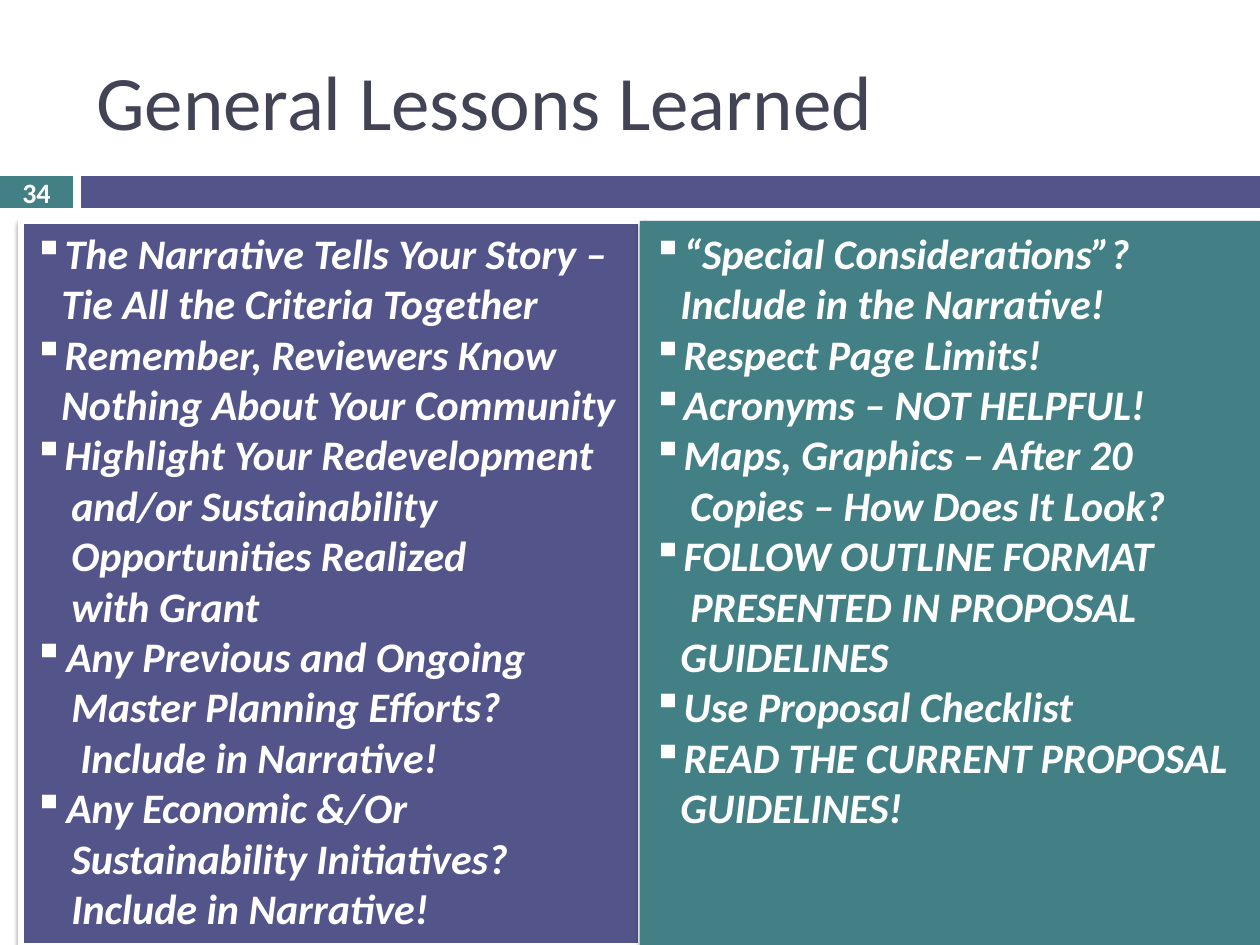
from lxml.etree import SubElement
from pptx import Presentation
from pptx.dml.color import RGBColor
from pptx.enum.shapes import MSO_SHAPE as SHAPE
from pptx.enum.text import MSO_ANCHOR as ANCHOR, PP_ALIGN as ALIGN
from pptx.oxml.ns import qn
from pptx.util import Pt

SCALE = 914400 / 126
FONT = "Calibri"
COLORS = {
    "title": "424456",
    "purple": "53548A",
    "teal": "438086",
    "white": "FFFFFF",
    "shadow": "000000",
}
BULLET, TIGHT, SPACED, WIDE = "▪", 15, 24, 33
NARROW_HANG, HANG, DEEP_HANG = 28, 38, 47

STORY_LINES = [
    (BULLET, TIGHT, "The Narrative Tells Your Story –"),
    (None, NARROW_HANG, "Tie All the Criteria Together"),
    (BULLET, SPACED, "Remember, Reviewers Know"),
    (None, NARROW_HANG, "Nothing About Your Community"),
    (BULLET, SPACED, "Highlight Your Redevelopment"),
    (None, HANG, "and/or Sustainability"),
    (None, HANG, "Opportunities Realized"),
    (None, HANG, "with Grant"),
    (BULLET, WIDE, "Any Previous and Ongoing"),
    (None, HANG, "Master Planning Efforts?"),
    (None, DEEP_HANG, "Include in Narrative!"),
    (BULLET, WIDE, "Any Economic &/Or"),
    (None, HANG, "Sustainability Initiatives?"),
    (None, HANG, "Include in Narrative!"),
]
FORMAT_LINES = [
    (BULLET, TIGHT, "“Special Considerations”?"),
    (None, NARROW_HANG, "Include in the Narrative!"),
    (BULLET, TIGHT, "Respect Page Limits!"),
    (BULLET, SPACED, "Acronyms – NOT HELPFUL!"),
    (BULLET, SPACED, "Maps, Graphics – After 20"),
    (None, HANG, "Copies – How Does It Look?"),
    (BULLET, SPACED, "FOLLOW OUTLINE FORMAT"),
    (None, HANG, "PRESENTED IN PROPOSAL"),
    (None, NARROW_HANG, "GUIDELINES"),
    (BULLET, TIGHT, "Use Proposal Checklist"),
    (BULLET, SPACED, "READ THE CURRENT PROPOSAL"),
    (None, NARROW_HANG, "GUIDELINES!"),
]


def px(n):
    return round(n * SCALE)


def rgb(name):
    return RGBColor.from_string(COLORS[name])


def add_rect(s, x, y, w, h, color):
    sp = s.shapes.add_shape(SHAPE.RECTANGLE, px(x), px(y), px(w), px(h))
    sp.shadow.inherit = False
    sp.fill.solid()
    sp.fill.fore_color.rgb = rgb(color)
    sp.line.fill.background()
    return sp


def add_run(p, text, size, color, bold=False, italic=False):
    r = p.add_run()
    r.text = text
    r.font.name = FONT
    r.font.size = Pt(size)
    r.font.bold = bold
    r.font.italic = italic
    r.font.color.rgb = rgb(color)


def add_shadow(sp, alpha, distance):
    effects = sp._element.spPr.find(qn("a:effectLst"))
    shadow = SubElement(
        effects, qn("a:outerShdw"), blurRad=str(Pt(3)), dist=str(Pt(distance)),
        dir="5400000", rotWithShape="0")
    color = SubElement(shadow, qn("a:srgbClr"), val=COLORS["shadow"])
    SubElement(color, qn("a:alpha"), val=str(alpha * 1000))


def add_title(s, x, y, w, h, text):
    sp = s.shapes.add_textbox(px(x), px(y), px(w), px(h))
    tf = sp.text_frame
    tf.word_wrap = True
    tf.vertical_anchor = ANCHOR.MIDDLE
    add_run(tf.paragraphs[0], text, 44, "title")


def add_band(s, x, y, w, h, number):
    badge_w, gap = 73, 8
    badge = add_rect(s, x, y, badge_w, h, "teal")
    add_rect(s, x + badge_w + gap, y, w - badge_w - gap, h, "purple")
    tf = badge.text_frame
    tf.margin_top = tf.margin_bottom = 0
    tf.vertical_anchor = ANCHOR.MIDDLE
    p = tf.paragraphs[0]
    p.alignment = ALIGN.CENTER
    add_run(p, number, 16, "white", bold=True)


def add_panel(s, x, y, w, h, color, lines, alpha, distance, outline=None):
    sp = add_rect(s, x, y, w, h, color)
    add_shadow(sp, alpha, distance)
    if outline:
        sp.line.color.rgb = rgb("white")
        sp.line.width = Pt(outline)
    tf = sp.text_frame
    tf.word_wrap = True
    tf.vertical_anchor = ANCHOR.TOP
    for i, (bullet, indent, text) in enumerate(lines):
        p = tf.add_paragraph() if i else tf.paragraphs[0]
        p.alignment = ALIGN.LEFT
        pPr = p._p.get_or_add_pPr()
        pPr.set("marL", str(px(indent)))
        pPr.set("indent", str(-px(indent) if bullet else 0))
        if bullet:
            SubElement(pPr, qn("a:buChar"), char=bullet)
        else:
            SubElement(pPr, qn("a:buNone"))
        add_run(p, text, 24, "white", bold=True, italic=True)


def main():
    prs = Presentation()
    prs.slide_width, prs.slide_height = px(1260), px(945)
    s = prs.slides.add_slide(prs.slide_layouts[6])
    add_band(s, 0, 176, 1260, 32, "34")
    add_title(s, 84, 32, 1124, 136, "General Lessons Learned")
    add_panel(s, 21, 221, 620, 725, "purple", STORY_LINES, 45, 2.4, 3.75)
    add_panel(s, 640, 221, 620, 725, "teal", FORMAT_LINES, 35, 2)
    prs.save("out.pptx")


if __name__ == "__main__":
    main()
